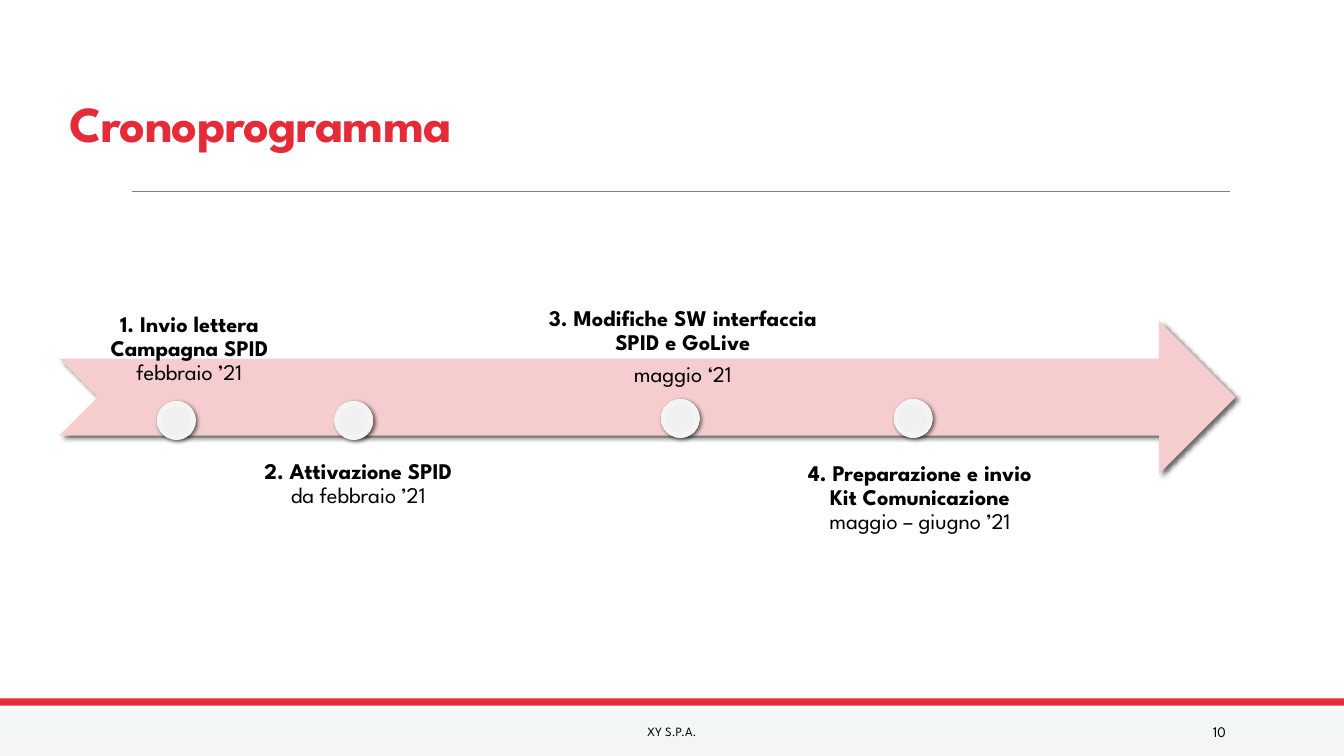
from lxml import etree
from pptx import Presentation
from pptx.dml.color import RGBColor
from pptx.enum.shapes import MSO_CONNECTOR, MSO_SHAPE
from pptx.enum.text import MSO_ANCHOR, PP_ALIGN
from pptx.oxml.ns import qn
from pptx.util import Cm, Pt

FONT = "League Spartan"
RED, PINK, GREY, PALE, BLACK = "E52A38", "F5CDCE", "808080", "F4F5F7", "000000"
MARKER_STOPS = [(0, "EEEEEE"), (34, "F0F0F0"), (70, "F4F4F4"), (100, "FFFFFF")]
MARKER_SIZE = 0.97
LABEL_HEIGHT = 3.86
WIDTH, HEIGHT = 33.87, 19.05

TITLE = "Cronoprogramma"
FOOTER = "XY S.P.A."
PAGE_NUMBER = "10"

# label left, top, width; anchor; marker left, top; paragraphs of (text, bold) runs
MILESTONES = [
    ((1.88, 6.15, 5.79), MSO_ANCHOR.BOTTOM, (3.96, 10.11),
     [[("1. Invio lettera Campagna SPID ", True), ("febbraio ’21", False)]]),
    ((6.12, 11.3, 5.82), MSO_ANCHOR.TOP, (8.43, 10.11),
     [[("2. Attivazione SPID ", True), ("da febbraio ’21", False)]]),
    ((13.26, 6.2, 7.9), MSO_ANCHOR.BOTTOM, (16.66, 10.06),
     [[("3. Modifiche SW interfaccia SPID e GoLive", True)],
      [("maggio ‘21", False)]]),
    ((19.96, 11.35, 6.45), MSO_ANCHOR.TOP, (22.53, 10.06),
     [[("4. Preparazione e invio Kit Comunicazione ", True),
       ("maggio – giugno ’21", False)]]),
]


def color(value):
    return RGBColor.from_string(value)


def add_child(parent, tag, **attributes):
    child = etree.SubElement(parent, qn(tag))
    for name, value in attributes.items():
        child.set(name, str(value))
    return child


def add_plain_shape(page, kind, left, top, width, height, fill=None):
    shape = page.shapes.add_shape(kind, Cm(left), Cm(top), Cm(width), Cm(height))
    shape.shadow.inherit = False
    shape.line.fill.background()
    if fill:
        shape.fill.solid()
        shape.fill.fore_color.rgb = color(fill)
    return shape


def add_shadow(shape):
    effects = shape.element.spPr.find(qn("a:effectLst"))
    outer = add_child(effects, "a:outerShdw", blurRad=Pt(3), dist=Pt(2),
                      dir=45 * 60000, algn="tl", rotWithShape=0)
    tint = add_child(outer, "a:srgbClr", val=BLACK)
    add_child(tint, "a:alpha", val=60000)


def fill_radial(shape, stops):
    properties = shape.element.spPr
    gradient = add_child(properties, "a:gradFill", rotWithShape=1)
    stop_list = add_child(gradient, "a:gsLst")
    for position, value in stops:
        stop = add_child(stop_list, "a:gs", pos=position * 1000)
        add_child(stop, "a:srgbClr", val=value)
    circle = add_child(gradient, "a:path", path="circle")
    add_child(circle, "a:fillToRect", l=100000, t=100000, r=100000, b=100000)
    properties.find(qn("a:prstGeom")).addnext(gradient)


def add_text(page, left, top, width, height, paragraphs, size, ink=BLACK,
             anchor=MSO_ANCHOR.MIDDLE, align=PP_ALIGN.LEFT,
             line_spacing=None, space_after=None, inset=None, tracking=None):
    box = page.shapes.add_textbox(Cm(left), Cm(top), Cm(width), Cm(height))
    frame = box.text_frame
    frame.word_wrap = True
    frame.vertical_anchor = anchor
    if inset is not None:
        frame.margin_left = frame.margin_right = Cm(inset)
        frame.margin_top = frame.margin_bottom = Cm(inset)
    for index, runs in enumerate(paragraphs):
        para = frame.add_paragraph() if index else frame.paragraphs[0]
        para.alignment = align
        para.line_spacing = line_spacing
        para.space_after = space_after
        for text, bold in runs:
            span = para.add_run()
            span.text = text
            span.font.name = FONT
            span.font.size = Pt(size)
            span.font.bold = bold
            span.font.color.rgb = color(ink)
            if tracking is not None:
                span.font._element.set("spc", str(round(tracking * 100)))


def add_frame(page):
    """Draw the title, the rule under it and the footer."""
    add_plain_shape(page, MSO_SHAPE.RECTANGLE, 0, 17.86, WIDTH, HEIGHT - 17.86, PALE)
    add_plain_shape(page, MSO_SHAPE.RECTANGLE, 0, 17.6, WIDTH, 0.18, RED)
    rule = page.shapes.add_connector(MSO_CONNECTOR.STRAIGHT,
                                     Cm(3.33), Cm(4.82), Cm(31), Cm(4.82))
    rule.line.color.rgb = color(GREY)
    rule.line.width = Pt(0.5)
    add_child(rule.element.spPr, "a:effectLst")
    add_text(page, 1.5, 2.01, 27.94, 1.96, [[(TITLE, True)]], 36, RED,
             MSO_ANCHOR.BOTTOM, line_spacing=0.85, tracking=-0.5)
    add_text(page, 10.24, 17.93, 13.39, 1.02, [[(FOOTER, False)]], 9,
             align=PP_ALIGN.CENTER)
    add_text(page, 27.51, 17.93, 3.63, 1.02, [[(PAGE_NUMBER, False)]], 10.5,
             align=PP_ALIGN.RIGHT)


def add_timeline(page):
    arrow = add_plain_shape(page, MSO_SHAPE.NOTCHED_RIGHT_ARROW,
                            1.5, 8.08, 29.64, 3.86, PINK)
    add_shadow(arrow)
    for label, anchor, marker_place, paragraphs in MILESTONES:
        add_text(page, *label, LABEL_HEIGHT, paragraphs, 16, anchor=anchor,
                 align=PP_ALIGN.CENTER, line_spacing=0.9,
                 space_after=Pt(5.6), inset=0.3)
        marker = add_plain_shape(page, MSO_SHAPE.OVAL, *marker_place,
                                 MARKER_SIZE, MARKER_SIZE)
        fill_radial(marker, MARKER_STOPS)
        add_shadow(marker)


def main():
    deck = Presentation()
    deck.slide_width, deck.slide_height = Cm(WIDTH), Cm(HEIGHT)
    page = deck.slides.add_slide(deck.slide_layouts[6])
    add_frame(page)
    add_timeline(page)
    deck.save("out.pptx")


if __name__ == "__main__":
    main()
